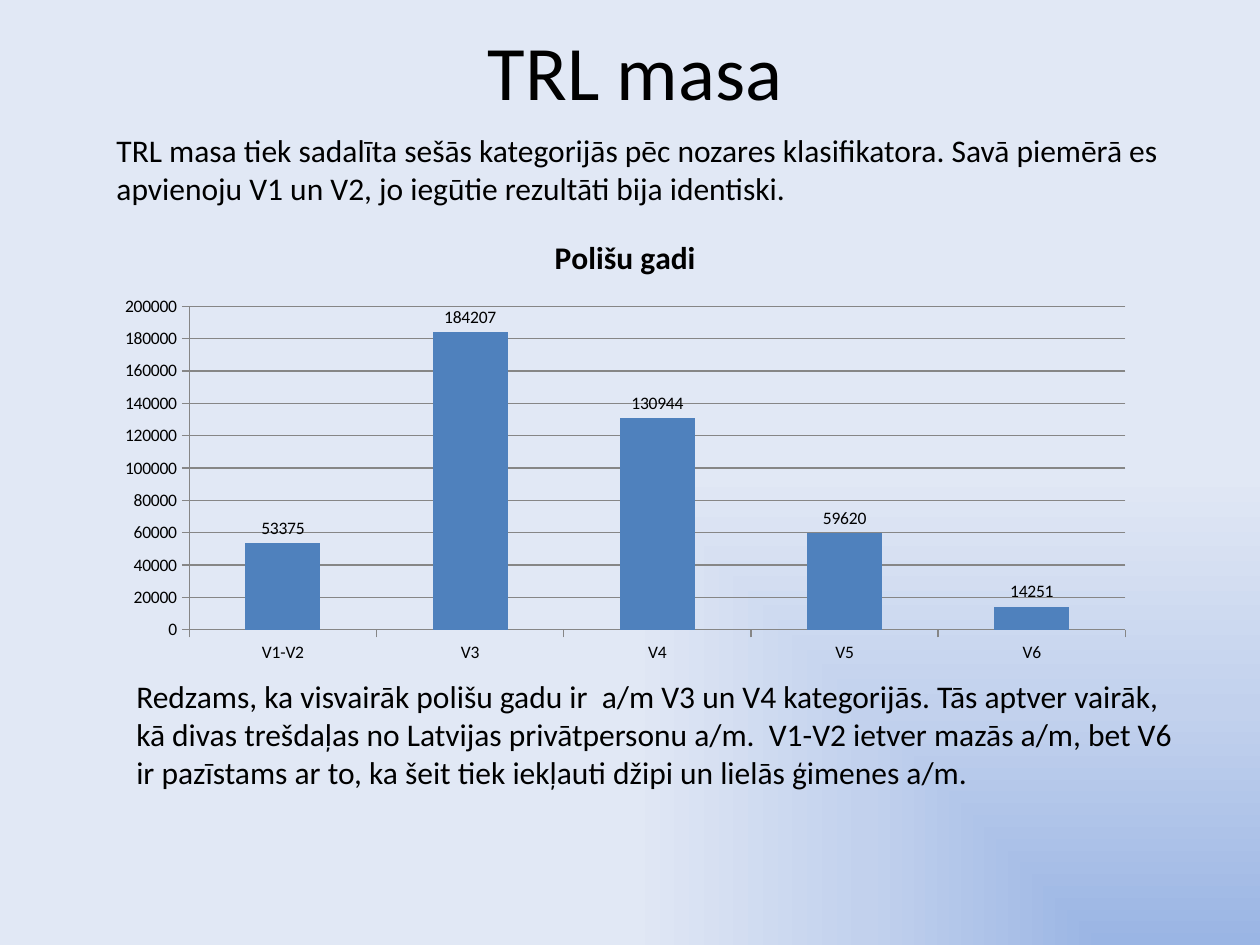
from pptx import Presentation
from pptx.chart.data import CategoryChartData
from pptx.dml.color import RGBColor
from pptx.enum.chart import XL_CHART_TYPE as ChartType, XL_LABEL_POSITION as LabelPos
from pptx.enum.chart import XL_TICK_MARK as Tick
from pptx.enum.text import MSO_ANCHOR as Anchor, MSO_AUTO_SIZE as AutoSize, PP_ALIGN as Align
from pptx.oxml import parse_xml
from pptx.oxml.ns import nsdecls, qn
from pptx.util import Pt

# Content
TITLE = "TRL masa"
CHART_TITLE = "Polišu gadi"
POLICY_YEARS = {"V1-V2": 53375, "V3": 184207, "V4": 130944, "V5": 59620, "V6": 14251}
INTRO = ("TRL masa tiek sadalīta sešās kategorijās pēc nozares klasifikatora. "
         "Savā piemērā es apvienoju V1 un V2, jo iegūtie rezultāti bija identiski.")
CONCLUSION = ("Redzams, ka visvairāk polišu gadu ir  a/m V3 un V4 kategorijās. "
              "Tās aptver vairāk, kā divas trešdaļas no Latvijas privātpersonu a/m.  "
              "V1-V2 ietver mazās a/m, bet V6 ir pazīstams ar to, ka šeit tiek iekļauti "
              "džipi un lielās ģimenes a/m.")

# Theme and layout, in points
THEME = {
    "font": "Calibri", "text": "000000", "bar": "4F81BD", "line": "868686",
    "title": 44, "body": 18, "chart": 10,
    "background": [(0, "9AB5E4"), (50, "C2D1ED"), (100, "E1E8F5")],
}
TEXT_W = 618
TITLE_BOX = (54, 0, TEXT_W, 80)
INTRO_BOX = (59.5, 71.5, TEXT_W, 51)
CHART_BOX = (59.5, 122.5, 595.5, 261)
CONCLUSION_BOX = (70.8, 383.3, TEXT_W, 73)


def style_font(font, size, bold=False):
    font.name, font.size, font.bold = THEME["font"], Pt(size), bold
    font.color.rgb = RGBColor.from_string(THEME["text"])


def add_paragraph_box(s, box, text):
    tf = s.shapes.add_textbox(*map(Pt, box)).text_frame
    tf.word_wrap = True
    tf.auto_size = AutoSize.SHAPE_TO_FIT_TEXT
    tf.text = text
    style_font(tf.paragraphs[0].runs[0].font, THEME["body"])


def set_background(s):
    """Gradient spreading from the bottom right corner."""
    s.background.fill.gradient()
    old = s.element.find(".//" + qn("a:gradFill"))
    stops = "".join(f'<a:gs pos="{pos * 1000}"><a:srgbClr val="{color}"/></a:gs>'
                    for pos, color in THEME["background"])
    old.getparent().replace(old, parse_xml(
        f'<a:gradFill {nsdecls("a")} rotWithShape="1"><a:gsLst>{stops}</a:gsLst>'
        '<a:path path="rect"><a:fillToRect l="100000" t="100000"/></a:path></a:gradFill>'))


def add_policy_chart(s):
    data = CategoryChartData(number_format="0")
    data.categories = list(POLICY_YEARS)
    data.add_series(CHART_TITLE, list(POLICY_YEARS.values()))
    chart = s.shapes.add_chart(ChartType.COLUMN_CLUSTERED, *map(Pt, CHART_BOX), data).chart
    style_font(chart.font, THEME["chart"])
    chart.has_legend = False

    # Title
    tf = chart.chart_title.text_frame
    tf.text = CHART_TITLE
    style_font(tf.paragraphs[0].runs[0].font, THEME["body"], bold=True)
    chart.chart_title.include_in_layout = False

    # Axes and gridlines
    value_axis, category_axis = chart.value_axis, chart.category_axis
    value_axis.minimum_scale, value_axis.maximum_scale = 0, 200000
    value_axis.major_unit = 20000
    value_axis.has_major_gridlines = True
    value_axis.tick_labels.number_format = "0"
    value_axis.tick_labels.number_format_is_linked = False
    for axis in (value_axis, category_axis):
        axis.major_tick_mark = Tick.OUTSIDE
        axis.minor_tick_mark = Tick.NONE
    for part in (value_axis, category_axis, value_axis.major_gridlines):
        part.format.line.color.rgb = RGBColor.from_string(THEME["line"])
        part.format.line.width = Pt(0.75)

    # Bars and value labels
    plot = chart.plots[0]
    plot.gap_width = 150
    plot.vary_by_categories = False
    fill = plot.series[0].format.fill
    fill.solid()
    fill.fore_color.rgb = RGBColor.from_string(THEME["bar"])
    labels = plot.series[0].data_labels
    labels.show_value = True
    labels.number_format, labels.number_format_is_linked = "0", False
    labels.position = LabelPos.OUTSIDE_END
    style_font(labels.font, THEME["chart"])


def main():
    prs = Presentation()
    prs.slide_width, prs.slide_height = Pt(720), Pt(540)
    s = prs.slides.add_slide(prs.slide_layouts[5])
    set_background(s)

    # Title
    sp = s.shapes.title
    sp.left, sp.top, sp.width, sp.height = map(Pt, TITLE_BOX)
    tf = sp.text_frame
    tf.text = TITLE
    tf.vertical_anchor = Anchor.MIDDLE
    p = tf.paragraphs[0]
    p.alignment = Align.CENTER
    style_font(p.runs[0].font, THEME["title"])

    # Text and chart
    add_paragraph_box(s, INTRO_BOX, INTRO)
    add_paragraph_box(s, CONCLUSION_BOX, CONCLUSION)
    add_policy_chart(s)
    prs.save("out.pptx")


if __name__ == "__main__":
    main()
